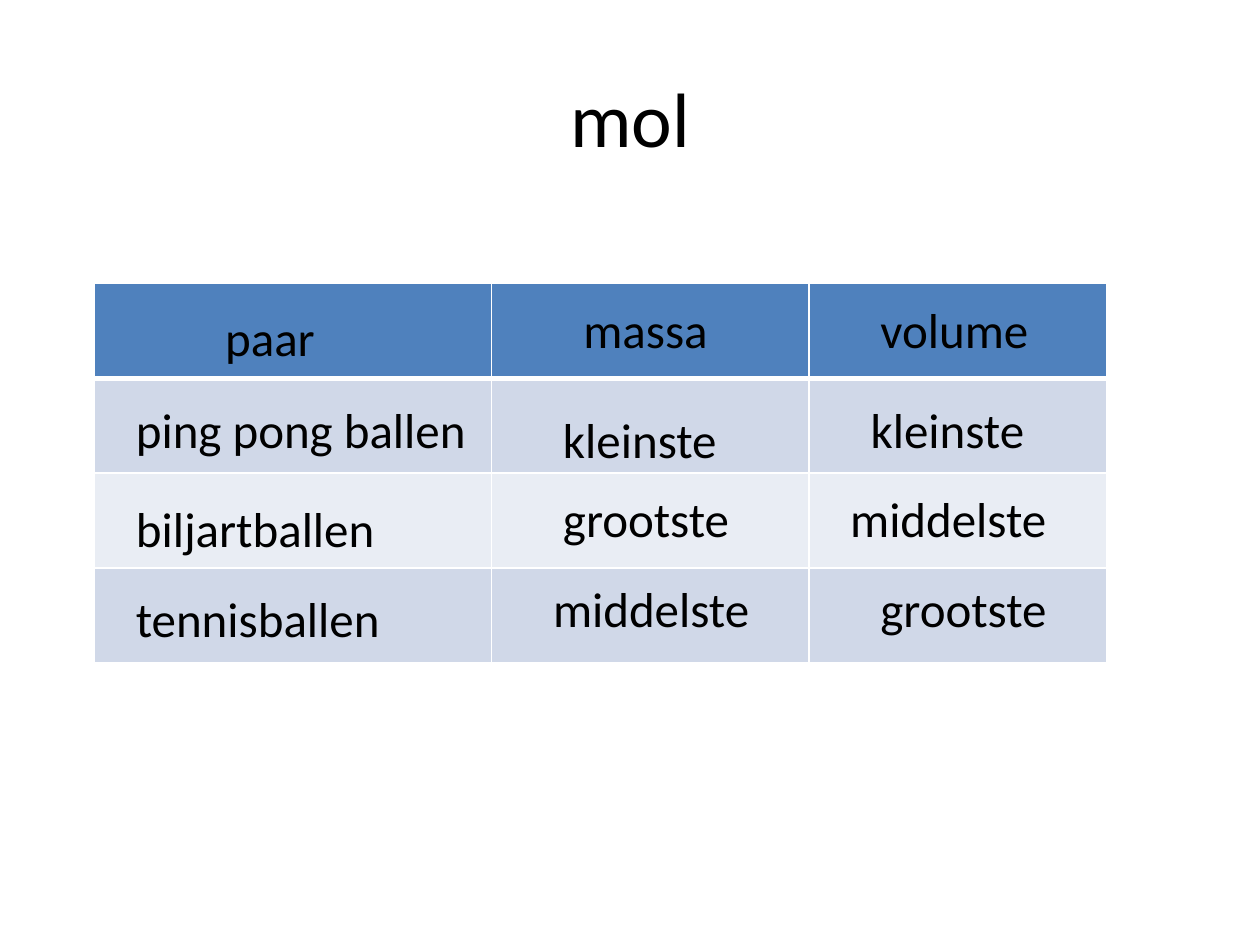
from lxml.etree import fromstring
from pptx import Presentation
from pptx.dml.color import RGBColor
from pptx.enum.text import MSO_ANCHOR, MSO_AUTO_SIZE, PP_ALIGN
from pptx.oxml.ns import nsdecls
from pptx.util import Cm, Pt

COLORS = {"text": "000000", "header": "4F81BD", "odd": "D0D8E8",
          "even": "E9EDF4", "border": "FFFFFF"}
FONT = "Calibri"

TITLE = "mol"
COLUMN_WIDTHS = [8, 6.4, 6]
ROW_FILLS = ["header", "odd", "even", "odd"]
ROW_HEIGHT = 1.91
TABLE_LEFT, TABLE_TOP = 1.91, 5.72
LABEL_HEIGHT = 1.45

# Labels over the table, by column: text, left, top, width in cm
LABELS = [
    ("paar", 4.29, 6.07, 5.41),
    ("ping pong ballen", 2.49, 7.92, 7.19),
    ("biljartballen", 2.49, 9.93, 6.5),
    ("tennisballen", 2.49, 11.73, 6.5),
    ("massa", 11.51, 5.92, 6.6),
    ("kleinste", 11.1, 8.13, 4),
    ("grootste", 11.1, 9.73, 4),
    ("middelste", 10.9, 11.53, 5),
    ("volume", 17.5, 5.92, 6.6),
    ("kleinste", 17.3, 7.92, 4),
    ("middelste", 16.89, 9.73, 5),
    ("grootste", 17.5, 11.53, 4),
]


def add_text(slide, text, left, top, width, height, size):
    box = slide.shapes.add_textbox(Cm(left), Cm(top), Cm(width), Cm(height))
    frame = box.text_frame
    frame.word_wrap = True
    frame.text = text
    font = frame.paragraphs[0].font
    font.name, font.size = FONT, Pt(size)
    font.color.rgb = RGBColor.from_string(COLORS["text"])
    return frame


def set_borders(cell, top, bottom):
    widths = {"lnL": 1, "lnR": 1, "lnT": top, "lnB": bottom}
    properties = cell._tc.get_or_add_tcPr()
    for position, (side, points) in enumerate(widths.items()):
        properties.insert(position, fromstring(
            f'<a:{side} {nsdecls("a")} w="{Pt(points)}"><a:solidFill>'
            f'<a:srgbClr val="{COLORS["border"]}"/></a:solidFill></a:{side}>'))


presentation = Presentation()
presentation.slide_width, presentation.slide_height = Cm(25.4), Cm(19.05)
slide = presentation.slides.add_slide(presentation.slide_layouts[6])

# Title
title = add_text(slide, TITLE, 1.27, 0.76, 22.86, 3.18, 44)
title.vertical_anchor = MSO_ANCHOR.MIDDLE
title.paragraphs[0].alignment = PP_ALIGN.CENTER

# Table grid
grid = slide.shapes.add_table(
    len(ROW_FILLS), len(COLUMN_WIDTHS), Cm(TABLE_LEFT), Cm(TABLE_TOP),
    Cm(sum(COLUMN_WIDTHS)), Cm(ROW_HEIGHT * len(ROW_FILLS))).table
for column, width in zip(grid.columns, COLUMN_WIDTHS):
    column.width = Cm(width)
for index, (row, fill) in enumerate(zip(grid.rows, ROW_FILLS)):
    row.height = Cm(ROW_HEIGHT)
    for cell in row.cells:
        cell.fill.solid()
        cell.fill.fore_color.rgb = RGBColor.from_string(COLORS[fill])
        set_borders(cell, top=3 if index == 1 else 1,
                    bottom=3 if index == 0 else 1)

# Labels
for text, left, top, width in LABELS:
    label = add_text(slide, text, left, top, width, LABEL_HEIGHT, 28)
    label.auto_size = MSO_AUTO_SIZE.SHAPE_TO_FIT_TEXT

presentation.save("out.pptx")
